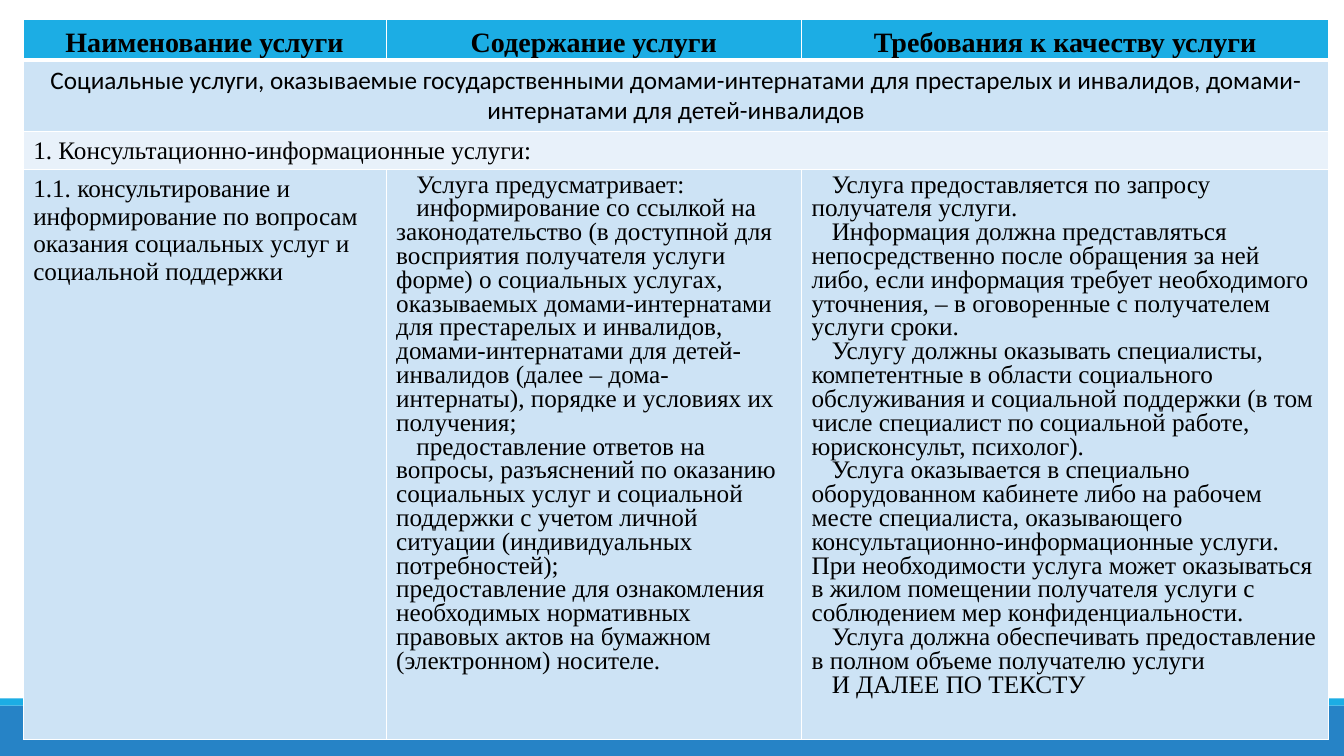
from lxml.etree import SubElement
from pptx import Presentation
from pptx.dml.color import RGBColor as Color
from pptx.enum.shapes import MSO_SHAPE as Preset
from pptx.enum.text import MSO_ANCHOR as Anchor, PP_ALIGN as Align
from pptx.oxml import parse_xml
from pptx.oxml.ns import nsdecls, qn
from pptx.util import Pt

SCALE = 9144
COLORS = {
    "cyan": "1CADE4", "blue": "2683C6", "band": "CDE3F5",
    "pale": "E8F1FA", "white": "FFFFFF", "black": "000000",
}
SERIF = "Times New Roman"
COLUMNS = [360, 412, 523]
ROWS = [40, 65, 37, 565]
ROW_FILLS = ["cyan", "band", "pale", "band"]
INDENT = 20
HEADINGS = ["Наименование услуги", "Содержание услуги", "Требования к качеству услуги"]
PROVIDERS = (
    "Социальные услуги, оказываемые государственными домами-интернатами "
    "для престарелых и инвалидов, домами-интернатами для детей-инвалидов"
)
SECTION = "1. Консультационно-информационные услуги:"
SERVICE = (
    "1.1. консультирование и информирование по вопросам оказания "
    "социальных услуг и социальной поддержки"
)
CONTENT = [
    "Услуга предусматривает:",
    "информирование со ссылкой на законодательство (в доступной для восприятия "
    "получателя услуги форме) о социальных услугах, оказываемых домами-интернатами "
    "для престарелых и инвалидов, домами-интернатами для детей-инвалидов "
    "(далее – дома-интернаты), порядке и условиях их получения;",
    "предоставление ответов на вопросы, разъяснений по оказанию социальных услуг и "
    "социальной поддержки с учетом личной ситуации (индивидуальных потребностей);",
]
CONTENT_END = (
    "предоставление для ознакомления необходимых нормативных правовых актов "
    "на бумажном (электронном) носителе."
)
QUALITY = [
    "Услуга предоставляется по запросу получателя услуги.",
    "Информация должна представляться непосредственно после обращения за ней либо, "
    "если информация требует необходимого уточнения, – в оговоренные с получателем "
    "услуги сроки.",
    "Услугу должны оказывать специалисты, компетентные в области социального "
    "обслуживания и социальной поддержки (в том числе специалист по социальной работе, "
    "юрисконсульт, психолог).",
    "Услуга оказывается в специально оборудованном кабинете либо на рабочем месте "
    "специалиста, оказывающего консультационно-информационные услуги. При необходимости "
    "услуга может оказываться в жилом помещении получателя услуги с соблюдением мер "
    "конфиденциальности.",
    "Услуга должна обеспечивать предоставление в полном объеме получателю услуги",
    "И ДАЛЕЕ ПО ТЕКСТУ",
]


def px(length):
    """Turn pixels into EMU."""
    return length * SCALE


def paint(target, name):
    """Give a shape, cell or font colour holder a solid fill."""
    target.fill.solid()
    target.fill.fore_color.rgb = Color.from_string(COLORS[name])


def add_strip(page, top, height, color):
    """Draw a full-width strip at the foot of the page."""
    strip = page.shapes.add_shape(Preset.RECTANGLE, 0, px(top), px(1333), px(height))
    strip.shadow.inherit = False
    strip.line.fill.background()
    paint(strip, color)


def set_borders(cell, top, bottom):
    """Outline a cell in white with the given top and bottom widths in points."""
    properties = cell._tc.get_or_add_tcPr()
    widths = {"lnL": 1, "lnR": 1, "lnT": top, "lnB": bottom}
    for index, (side, width) in enumerate(widths.items()):
        border = parse_xml(f'<a:{side} {nsdecls("a")} w="{Pt(width)}"/>')
        fill = SubElement(border, qn("a:solidFill"))
        SubElement(fill, qn("a:srgbClr"), val=COLORS["white"])
        properties.insert(index, border)


def write(cell, texts, size=18, font=SERIF, bold=False, align=Align.LEFT, spacing=None, indent=0):
    """Append paragraphs of one style to a cell."""
    frame = cell.text_frame
    for text in texts:
        para = frame.add_paragraph() if frame.text else frame.paragraphs[0]
        para.alignment = align
        para.line_spacing = spacing
        if indent:
            properties = para._p.get_or_add_pPr()
            properties.set("marL", "0")
            properties.set("indent", str(px(indent)))
        span = para.add_run()
        span.text = text
        span.font.size = Pt(size)
        span.font.name = font
        span.font.bold = bold
        span.font.color.rgb = Color.from_string(COLORS["black"])


def add_grid(page):
    """Add the empty, coloured service table and return it."""
    frame = page.shapes.add_table(
        len(ROWS), len(COLUMNS), px(23), px(19), px(sum(COLUMNS)), px(sum(ROWS))
    )
    table = frame.table
    for column, width in zip(table.columns, COLUMNS):
        column.width = px(width)
    for index, (row, height) in enumerate(zip(table.rows, ROWS)):
        row.height = px(height)
        for cell in row.cells:
            paint(cell, ROW_FILLS[index])
            set_borders(cell, 3 if index == 1 else 1, 3 if index == 0 else 1)
    for index in (1, 2):
        table.cell(index, 0).merge(table.cell(index, len(COLUMNS) - 1))
    return table


def fill_table(table):
    """Write the wording of the service table."""
    for cell, heading in zip(table.rows[0].cells, HEADINGS):
        cell.vertical_anchor = Anchor.MIDDLE
        cell.margin_left = cell.margin_right = px(1)
        cell.margin_top = cell.margin_bottom = px(1)
        write(cell, [heading], size=20, bold=True, align=Align.CENTER, spacing=1.25)
    write(table.cell(1, 0), [PROVIDERS], font="Calibri", align=Align.CENTER)
    write(table.cell(2, 0), [SECTION])
    service, content, quality = table.rows[3].cells
    write(service, [SERVICE])
    write(content, CONTENT, spacing=Pt(17), indent=INDENT)
    write(content, [CONTENT_END], spacing=Pt(17))
    write(quality, QUALITY, spacing=Pt(17), indent=INDENT)


def main():
    """Build the deck and save it."""
    deck = Presentation()
    deck.slide_width, deck.slide_height = px(1333), px(750)
    page = deck.slides.add_slide(deck.slide_layouts[6])
    add_strip(page, 700, 50, "blue")
    add_strip(page, 693, 7, "cyan")
    fill_table(add_grid(page))
    deck.save("out.pptx")


if __name__ == "__main__":
    main()
